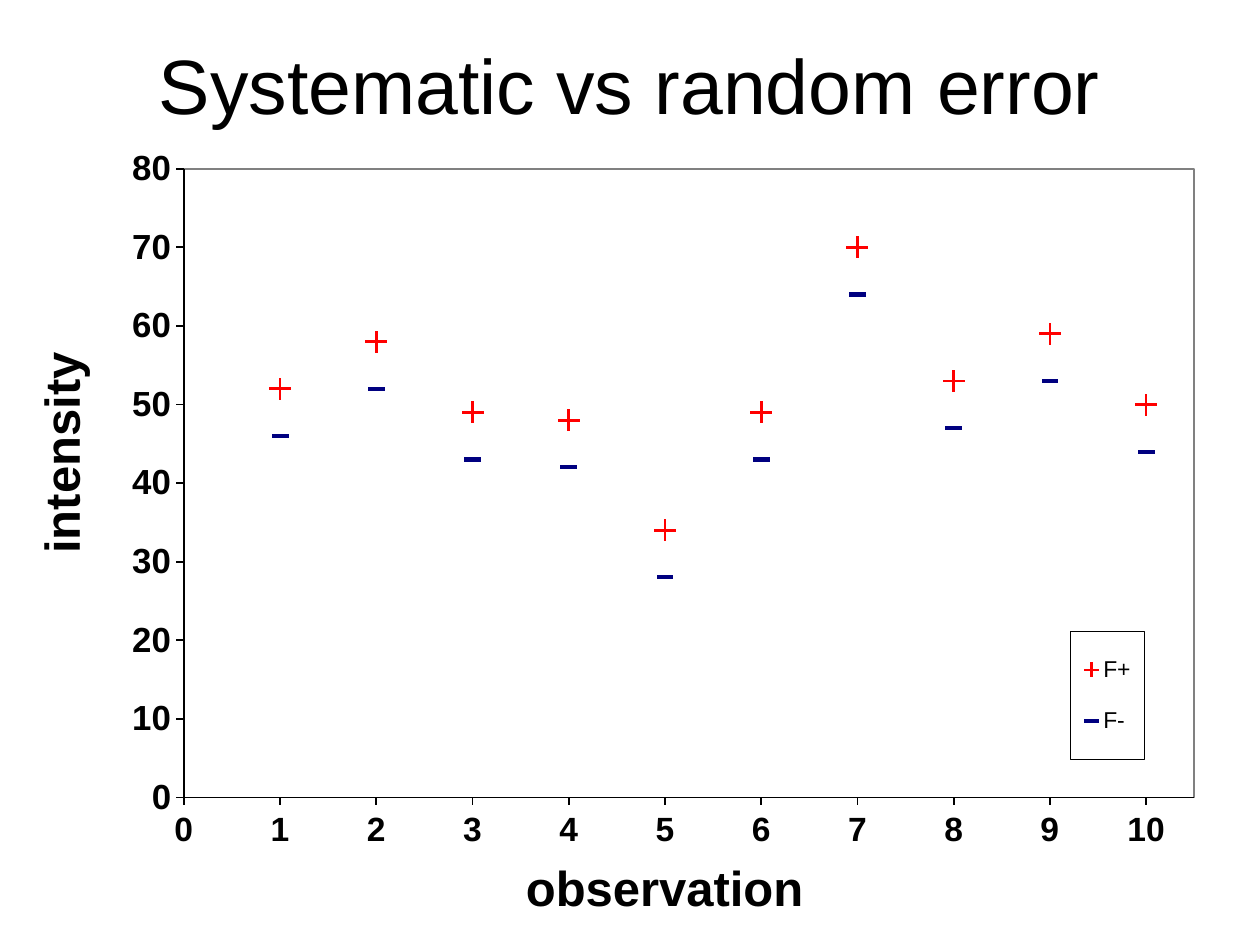
from lxml import etree
from pptx import Presentation
from pptx import util as u
from pptx.chart.data import XyChartData
from pptx.dml.color import RGBColor
from pptx.enum import chart as charts, text
from pptx.oxml.ns import qn

# Content
SERIES = [
    {"name": "F+", "values": [52, 58, 49, 48, 34, 49, 70, 53, 59, 50],
     "marker": charts.XL_MARKER_STYLE.PLUS, "size": 12, "color": "red"},
    {"name": "F-", "values": [46, 52, 43, 42, 28, 43, 64, 47, 53, 44],
     "marker": charts.XL_MARKER_STYLE.DASH, "size": 9, "color": "navy"},
]
AXES = {
    "category_axis": {"minimum_scale": 0, "maximum_scale": 10.5, "major_unit": 1},
    "value_axis": {"minimum_scale": 0, "maximum_scale": 80, "major_unit": 10},
}
# text, (left, top, width, height), rotation, theme size, bold, wrap
LABELS = [
    ("observation", (4.06, 6.76, 2.43, 0.57), 0, "axis_title", True, False),
    ("intensity", (-0.43, 3.31, 1.82, 0.57), 270, "axis_title", True, False),
    ("Systematic vs random error", (0, 0.25, 10, 0.84), 0, "title", False, True),
]
CHART_AREA = (0.48, 0.8, 10.14, 6.12)
PLOT_AREA = (1.46, 1.34, 8.02, 4.99)
LEGEND_AREA = (8.5, 5.01, 0.58, 1.02)

THEME = {
    "font": "Arial",
    "colors": {"ink": "000000", "red": "FF0000", "navy": "000080", "frame": "808080"},
    "sizes": {"title": 44, "axis_title": 28, "category_axis": 19.2,
              "value_axis": 19.9, "legend": 13.1, "chart": 10.2},
}


def color(name):
    return RGBColor.from_string(THEME["colors"][name])


def apply(target, values):
    for name, value in values.items():
        setattr(target, name, value)


def style_font(font, size, bold=False):
    apply(font, {"name": THEME["font"], "size": u.Pt(THEME["sizes"][size]), "bold": bold})
    font.color.rgb = color("ink")


def style_line(line, name, width):
    line.color.rgb = color(name)
    line.width = u.Pt(width)


def chart_layout(area, inner=False):
    """Manual layout, from slide inches to fractions of the chart."""
    left, top, width, height = CHART_AREA
    values = {"xMode": "edge", "yMode": "edge",
              "x": (area[0] - left) / width, "y": (area[1] - top) / height,
              "w": area[2] / width, "h": area[3] / height}
    if inner:
        values = {"layoutTarget": "inner", **values}
    layout = etree.Element(qn("c:layout"))
    manual = etree.SubElement(layout, qn("c:manualLayout"))
    for name, value in values.items():
        shown = value if isinstance(value, str) else f"{value:.4f}"
        etree.SubElement(manual, qn(f"c:{name}"), val=shown)
    return layout


def frame(name, width):
    """Outline without fill, for chart parts."""
    properties = etree.Element(qn("c:spPr"))
    etree.SubElement(properties, qn("a:noFill"))
    line = etree.SubElement(properties, qn("a:ln"), w=str(int(u.Pt(width))))
    fill = etree.SubElement(line, qn("a:solidFill"))
    etree.SubElement(fill, qn("a:srgbClr"), val=THEME["colors"][name])
    return properties


def add_scatter(page):
    data = XyChartData()
    for entry in SERIES:
        points = data.add_series(entry["name"])
        for observation, intensity in enumerate(entry["values"], 1):
            points.add_data_point(observation, intensity)
    chart = page.shapes.add_chart(charts.XL_CHART_TYPE.XY_SCATTER,
                                  *map(u.Inches, CHART_AREA), data).chart
    chart.has_title = False
    style_font(chart.font, "chart")
    chart.plots[0].vary_by_categories = False

    # Markers without joining lines
    for series, entry in zip(chart.plots[0].series, SERIES):
        series.smooth = False
        series.format.line.fill.background()
        marker = series.marker
        apply(marker, {"style": entry["marker"], "size": entry["size"]})
        marker.format.fill.solid()
        marker.format.fill.fore_color.rgb = color(entry["color"])
        style_line(marker.format.line, entry["color"], 1)

    # Axes
    for name, scale in AXES.items():
        axis = getattr(chart, name)
        apply(axis, {**scale, "has_major_gridlines": False, "has_title": False,
                     "major_tick_mark": charts.XL_TICK_MARK.OUTSIDE,
                     "minor_tick_mark": charts.XL_TICK_MARK.NONE})
        apply(axis.tick_labels, {"number_format": "General",
                                 "number_format_is_linked": False})
        style_font(axis.tick_labels.font, name, bold=True)
        style_line(axis.format.line, "ink", 1.02)

    # Plot frame
    plot = chart.element.find(".//" + qn("c:plotArea"))
    for layout in plot.findall(qn("c:layout")):
        plot.remove(layout)
    plot.insert(0, chart_layout(PLOT_AREA, inner=True))
    plot.append(frame("frame", 1))

    # Legend
    chart.has_legend = True
    legend = chart.legend
    apply(legend, {"position": charts.XL_LEGEND_POSITION.RIGHT, "include_in_layout": False})
    style_font(legend.font, "legend")
    root = chart.element.find(".//" + qn("c:legend"))
    for layout in root.findall(qn("c:layout")):
        root.remove(layout)
    root.find(qn("c:overlay")).addprevious(chart_layout(LEGEND_AREA))
    root.find(qn("c:txPr")).addprevious(frame("ink", 0.5))


def add_label(page, words, area, rotation, size, bold, wrap):
    box = page.shapes.add_textbox(*map(u.Inches, area))
    box.rotation = rotation
    apply(box.text_frame, {"word_wrap": wrap,
                           "auto_size": text.MSO_AUTO_SIZE.SHAPE_TO_FIT_TEXT})
    para = box.text_frame.paragraphs[0]
    para.alignment = text.PP_ALIGN.CENTER
    span = para.add_run()
    span.text = words
    style_font(span.font, size, bold)


def main():
    deck = Presentation()
    apply(deck, {"slide_width": u.Inches(10), "slide_height": u.Inches(7.5)})
    page = deck.slides.add_slide(deck.slide_layouts[6])
    add_scatter(page)
    for label in LABELS:
        add_label(page, *label)
    deck.save("out.pptx")


if __name__ == "__main__":
    main()
